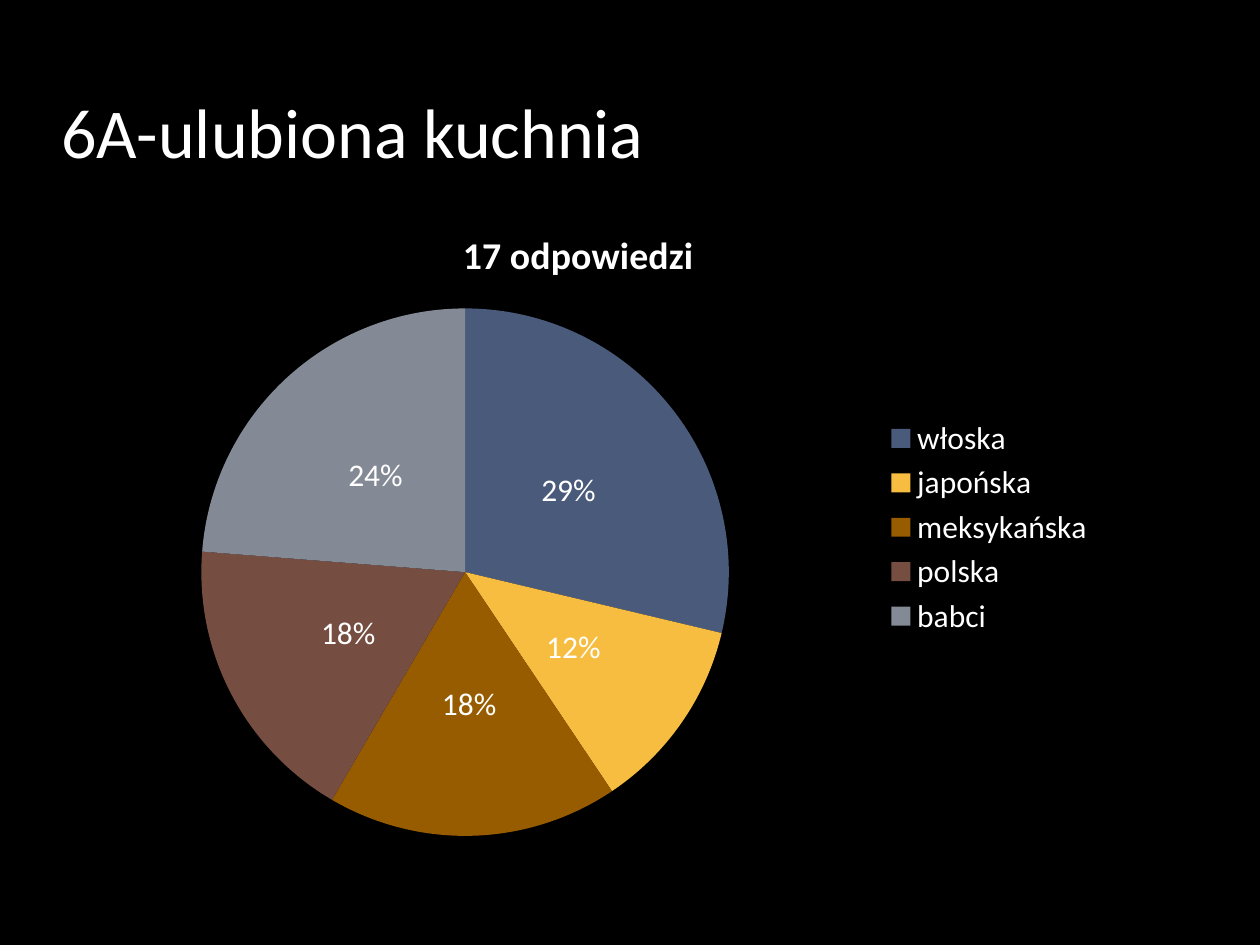
from typing import NamedTuple

from pptx import Presentation
from pptx.chart import data as chart_data
from pptx.dml.color import RGBColor
from pptx.enum import chart as chart_enum, text
from pptx.util import Inches, Pt

WIDTH, HEIGHT = Inches(10), Inches(7.5)
FONT = "Calibri"
WHITE, BLACK = "FFFFFF", "000000"


class Area(NamedTuple):
    left: float
    top: float
    width: float
    height: float


class Cuisine(NamedTuple):
    name: str
    share: int
    color: str


TITLE_AREA = Area(0.039, 0.033, 0.84, 0.156)
CHART_AREA = Area(0.039, 0.213, 0.84, 0.69)
CUISINES = [
    Cuisine("włoska", 29, "4A5A7A"),
    Cuisine("japońska", 12, "F7BD40"),
    Cuisine("meksykańska", 18, "975C00"),
    Cuisine("polska", 18, "754D41"),
    Cuisine("babci", 24, "838995"),
]


def paint(target, color: str) -> None:
    target.solid()
    target.fore_color.rgb = RGBColor.from_string(color)


def style_font(font, size: float, bold: bool = False) -> None:
    font.name = FONT
    font.size = Pt(size)
    font.bold = bold
    paint(font.fill, WHITE)


def place(area: Area) -> tuple[int, int, int, int]:
    return (
        round(area.left * WIDTH),
        round(area.top * HEIGHT),
        round(area.width * WIDTH),
        round(area.height * HEIGHT),
    )


def add_title(page, area: Area, words: str) -> None:
    frame = page.shapes.add_textbox(*place(area)).text_frame
    frame.word_wrap = True
    frame.vertical_anchor = text.MSO_ANCHOR.BOTTOM
    frame.text = words
    para = frame.paragraphs[0]
    para.space_before = Pt(4)
    style_font(para.runs[0].font, 40)


def add_pie(page, area: Area, heading: str, cuisines: list[Cuisine]) -> None:
    figures = chart_data.CategoryChartData()
    figures.categories = [cuisine.name for cuisine in cuisines]
    figures.add_series("Series 1", [cuisine.share for cuisine in cuisines])
    pie = page.shapes.add_chart(
        chart_enum.XL_CHART_TYPE.PIE, *place(area), figures
    ).chart
    style_font(pie.font, 18)

    pie.has_title = True
    pie.chart_title.include_in_layout = False
    title_frame = pie.chart_title.text_frame
    title_frame.text = heading
    style_font(title_frame.paragraphs[0].runs[0].font, 21.6, bold=True)

    pie.has_legend = True
    pie.legend.position = chart_enum.XL_LEGEND_POSITION.RIGHT
    pie.legend.include_in_layout = False
    style_font(pie.legend.font, 18)

    plot = pie.plots[0]
    plot.vary_by_categories = True
    plot.has_data_labels = True
    labels = plot.data_labels
    labels.show_value = False
    labels.show_percentage = True
    labels.number_format = "0%"
    labels.number_format_is_linked = False
    labels.position = chart_enum.XL_LABEL_POSITION.CENTER
    style_font(labels.font, 18)

    for index, cuisine in enumerate(cuisines):
        slice_format = plot.series[0].points[index].format
        paint(slice_format.fill, cuisine.color)
        slice_format.line.fill.background()


def main() -> None:
    deck = Presentation()
    deck.slide_width, deck.slide_height = WIDTH, HEIGHT
    page = deck.slides.add_slide(deck.slide_layouts[6])
    paint(page.background.fill, BLACK)
    add_pie(page, CHART_AREA, "17 odpowiedzi", CUISINES)
    add_title(page, TITLE_AREA, "6A-ulubiona kuchnia")
    deck.save("out.pptx")


if __name__ == "__main__":
    main()
